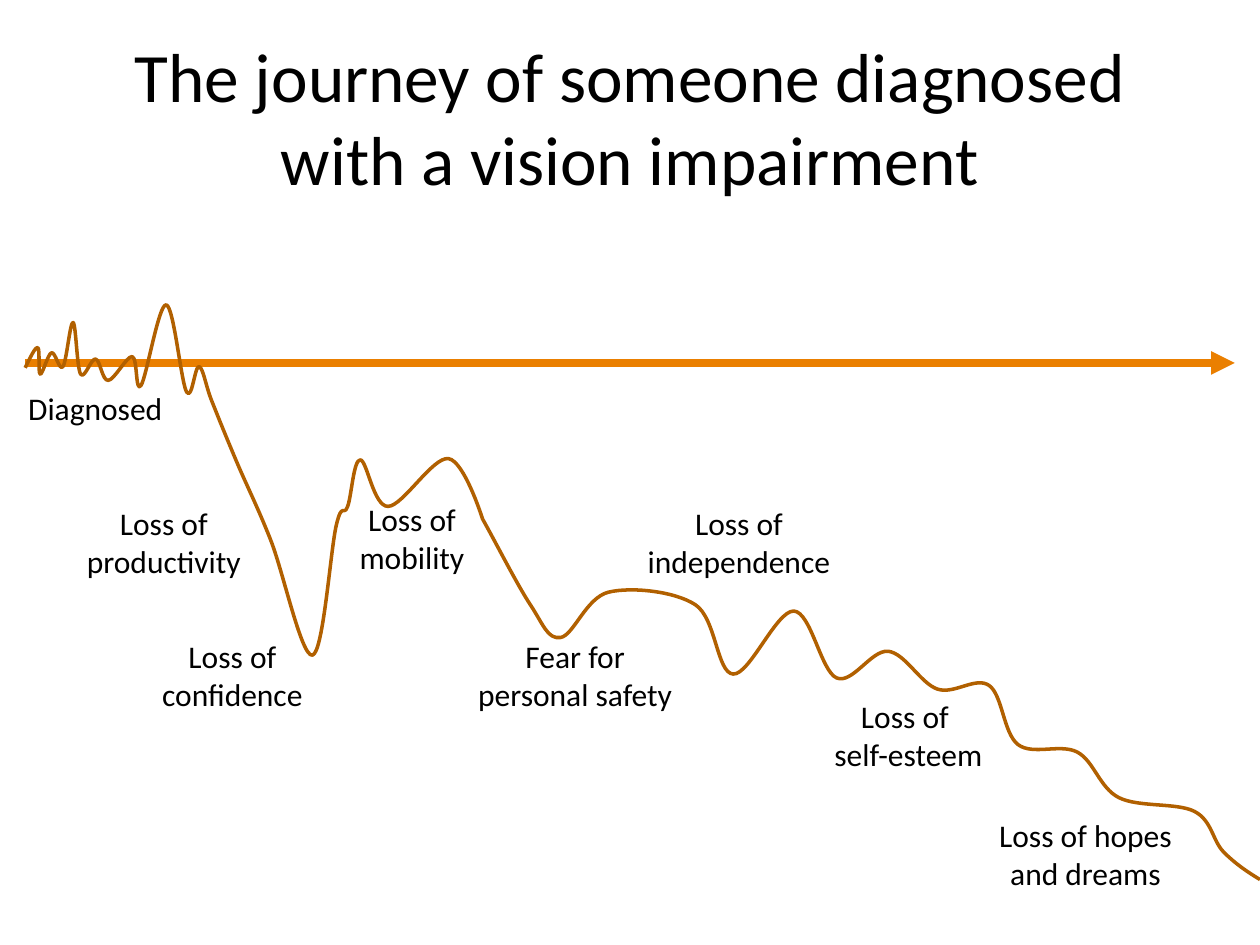
"""Build a slide that charts the journey after a vision impairment diagnosis."""
from pptx import Presentation
from pptx.dml.color import RGBColor
from pptx.enum.shapes import MSO_CONNECTOR as Connector
from pptx.enum.text import MSO_ANCHOR as Anchor, MSO_AUTO_SIZE as AutoSize, PP_ALIGN as Align
from pptx.oxml.ns import qn
from pptx.oxml.xmlchemy import OxmlElement
from pptx.util import Pt


def color(hex_string):
    return RGBColor.from_string(hex_string)


def format_text(frame, size):
    frame.word_wrap = True
    for para in frame.paragraphs:
        para.alignment = Align.CENTER
        for span in para.runs:
            span.font.name = "Calibri"
            span.font.size = Pt(size)
            span.font.color.rgb = color("000000")


deck = Presentation()
deck.slide_width, deck.slide_height = Pt(720), Pt(540)
page = deck.slides.add_slide(deck.slide_layouts[5])

title = page.shapes.title
title.left, title.top, title.width, title.height = Pt(36), Pt(21.6), Pt(648), Pt(90)
title.text_frame.text = "The journey of someone diagnosed with a vision impairment"
title.text_frame.auto_size = AutoSize.NONE
title.text_frame.vertical_anchor = Anchor.MIDDLE
format_text(title.text_frame, 39.6)

timeline = page.shapes.add_connector(Connector.STRAIGHT, Pt(14.4), Pt(207.4), Pt(705.6), Pt(207.4))
timeline.line.color.rgb = color("EA7F00")
timeline.line.width = Pt(4.5)
arrowhead = OxmlElement("a:tailEnd")
arrowhead.set("type", "triangle")
timeline.line._get_or_add_ln().append(arrowhead)
timeline._element.spPr.append(OxmlElement("a:effectLst"))

labels = [
    ("Diagnosed ", 0, 218.9, 113, 28.8),
    ("Loss of confidence", 76.3, 360.7, 113, 51.1),
    ("Loss of productivity", 36.7, 284.4, 113.8, 51.1),
    ("Loss of \nself-esteem", 468, 394.6, 102.2, 51.1),
    ("Loss of independence", 360, 284.4, 124.6, 51.1),
    ("Fear for personal safety", 263.5, 360.7, 130.3, 51.1),
    ("Loss of hopes and dreams", 558, 463, 124.6, 51.1),
    ("Loss of mobility", 190.1, 282.2, 90.7, 51.1),
]
for text, left, top, width, height in labels:
    box = page.shapes.add_textbox(Pt(left), Pt(top), Pt(width), Pt(height))
    box.text_frame.text = text
    box.text_frame.auto_size = AutoSize.SHAPE_TO_FIT_TEXT
    format_text(box.text_frame, 18)

lead_in, lead_out = (4.3, 233.3), (742.3, 512.6)
corner = (275.8, 296.6)
anchors = [
    (14.4, 210.2), (21.6, 198.7), (23, 213.8), (29.5, 201.6), (36, 209.5),
    (41.8, 184.3), (46.1, 213.8), (54.7, 205.2), (61.9, 217.4), (75.6, 203.8),
    (80.6, 220.3), (95, 174.2), (106.6, 223.9), (113.8, 209.5), (121, 229),
    (135.4, 264.2), (154.8, 308.9), (178.6, 374.4), (192.2, 300.2), (198.7, 289.4),
    (205.9, 262.8), (221.8, 289.4), (256.3, 262.1), corner, (303.1, 345.6),
    (320.4, 364.3), (347.8, 338.4), (397.4, 345.6), (419, 385.2), (453.6, 349.2),
    (478.1, 387.4), (507.6, 372.2), (535.7, 393.8), (565.2, 391.7), (581.8, 425.5),
    (615.6, 429.8), (639.4, 455.8), (682.6, 463.7), (699.1, 486.7), (720, 502.6),
]
builder = page.shapes.build_freeform(Pt(anchors[0][0]), Pt(anchors[0][1]))
builder.add_line_segments([(Pt(x), Pt(y)) for x, y in anchors[1:]], close=False)
journey = builder.convert_to_shape()
journey.shadow.inherit = False
journey.fill.background()
journey.line.color.rgb = color("B16000")
journey.line.width = Pt(2)

knots = [lead_in, *anchors, lead_out]
segments = list(journey._element.iter(qn("a:lnTo")))
for segment, before, start, end, after in zip(segments, knots, knots[1:], knots[2:], knots[3:]):
    leaving = [s + (e - b) / 6 for b, s, e in zip(before, start, end)]
    arriving = [e - (a - s) / 6 for s, e, a in zip(start, end, after)]
    if end == corner:
        arriving = end
    segment.tag = qn("a:cubicBezTo")
    for position, (x, y) in enumerate((leaving, arriving)):
        control = OxmlElement("a:pt")
        control.set("x", str(Pt(x) - journey.left))
        control.set("y", str(Pt(y) - journey.top))
        segment.insert(position, control)

deck.save("out.pptx")
